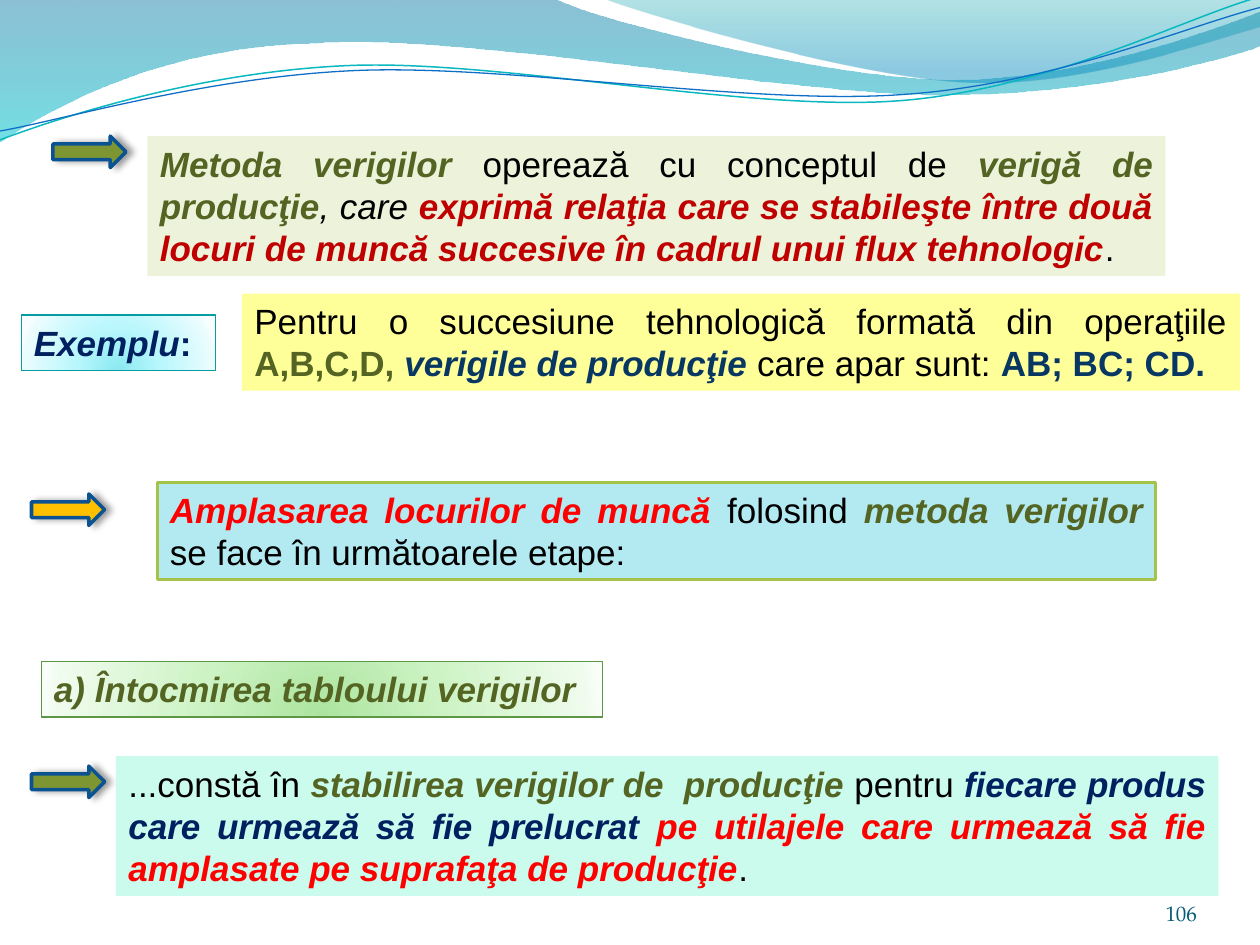
from dataclasses import dataclass
from math import cos, radians, sin
from typing import NamedTuple, Optional

from lxml.etree import SubElement
from pptx import Presentation
from pptx.dml.color import RGBColor
from pptx.enum.shapes import MSO_SHAPE as Preset
from pptx.enum.text import MSO_ANCHOR as Anchor, PP_ALIGN as Align
from pptx.oxml.ns import qn
from pptx.util import Inches, Pt

BLACK = RGBColor(0x00, 0x00, 0x00)
OLIVE = RGBColor(0x54, 0x64, 0x22)
DARK_RED = RGBColor(0xC0, 0x00, 0x00)
RED = RGBColor(0xFF, 0x00, 0x00)
NAVY = RGBColor(0x00, 0x20, 0x60)
BLUE = RGBColor(0x08, 0x37, 0x63)
PAGE_BLUE = RGBColor(0x04, 0x5D, 0x75)
ARROW_GREEN = RGBColor(0x7E, 0x96, 0x32)
ARROW_GOLD = RGBColor(0xFF, 0xC0, 0x00)
ARROW_EDGE = RGBColor(0x0B, 0x52, 0x92)
PALE_GREEN = RGBColor(0xED, 0xF3, 0xDB)
PALE_YELLOW = RGBColor(0xFF, 0xFF, 0x99)
PALE_BLUE = RGBColor(0xB3, 0xEA, 0xF2)
PALE_MINT = RGBColor(0xCA, 0xFB, 0xED)
LIME = RGBColor(0xA5, 0xC2, 0x49)
TEAL = RGBColor(0x06, 0x9C, 0xA3)
LEAF = RGBColor(0x5B, 0x97, 0x47)
WAVE_TEAL = RGBColor(0x0A, 0xB8, 0xBF)
WAVE_BLUE = RGBColor(0x0F, 0x6F, 0xC6)
WAVE_TILT = -2.7


class Stop(NamedTuple):
    position: int
    color: str
    alpha: int = 100


class Line(NamedTuple):
    color: RGBColor
    width: float


class Run(NamedTuple):
    text: str
    color: RGBColor = BLACK
    bold: bool = False
    italic: bool = False


@dataclass
class Wave:
    """Points of an outline: 2 values make a line, 6 a Bezier curve."""
    start: tuple
    segments: list
    stops: Optional[list] = None
    line: Optional[Line] = None
    center: Optional[tuple] = None  # tilted about this point


@dataclass
class Box:
    area: tuple
    runs: list
    fill: Optional[RGBColor] = None
    stops: Optional[list] = None
    line: Optional[Line] = None
    align: Align = Align.JUSTIFY


WAVES = [
    Wave((0, 0), [(4.4, -0.01), (4.76, 0.17, 6.64, 0.63, 7.58, 0.63),
                  (8.53, 0.63, 9.58, 0.26, 10, 0.09), (10.01, 0.36),
                  (9.83, 0.44, 8.7, 0.76, 7.46, 0.75),
                  (6.22, 0.75, 3.82, 0.28, 2.57, 0.34),
                  (1.29, 0.36, 0.46, 0.83, -0.01, 1.13)],
         stops=[Stop(0, "0074A1", 45), Stop(100, "00C6CF", 55)]),
    Wave((4.79, -0.01), [(5.09, 0.11, 6.82, 0.62, 7.69, 0.65),
                         (8.56, 0.69, 9.61, 0.32, 10, 0.21), (10, 0)],
         stops=[Stop(0, "00A1A9", 30), Stop(80, "008BBF", 45)]),
    Wave((0, 1.11), [(0.48, 0.93, 1.58, 0.57, 2.77, 0.52),
                     (3.95, 0.47, 5.93, 0.89, 7.13, 0.8),
                     (8.33, 0.71, 9.38, 0.15, 9.98, -0.02)],
         line=Line(WAVE_TEAL, 0.85), center=(4.99, 0.57)),
    Wave((0, 1.04), [(0.47, 0.96, 1.64, 0.61, 2.83, 0.56),
                     (4.03, 0.51, 5.97, 0.84, 7.17, 0.75),
                     (8.36, 0.67, 9.41, 0.21, 10, 0.06)],
         line=Line(WAVE_BLUE, 0.75), center=(5, 0.59)),
]

BOXES = [
    Box((1.17, 1.08, 8.08, 1.11), [
        Run("Metoda verigilor ", OLIVE, True, True),
        Run("operează cu conceptul de "),
        Run("verigă de producţie", OLIVE, True, True),
        Run(", care ", italic=True),
        Run("exprimă relaţia care se stabileşte între două locuri de muncă "
            "succesive în cadrul unui flux tehnologic", DARK_RED, True, True),
        Run(".")], fill=PALE_GREEN),
    Box((0.17, 2.5, 1.54, 0.44),
        [Run("Exemplu", NAVY, True, True), Run(":", NAVY, True)],
        stops=[Stop(0, "8BE9F1"), Stop(43, "B9F7FD"),
               Stop(93, "EAFCFE"), Stop(100, "F8FEFF")],
        line=Line(TEAL, 0.75), align=Align.LEFT),
    Box((1.92, 2.33, 7.92, 0.77), [
        Run("Pentru o succesiune tehnologică formată din operaţiile "),
        Run("A,B,C,D, ", OLIVE, True),
        Run("verigile de producţie ", BLUE, True, True),
        Run("care apar sunt: "),
        Run("AB; BC; CD.", BLUE, True)], fill=PALE_YELLOW),
    Box((1.25, 3.83, 7.92, 0.77), [
        Run("Amplasarea locurilor de muncă ", RED, True, True),
        Run("folosind "),
        Run("metoda verigilor ", OLIVE, True, True),
        Run("se face în următoarele etape:")],
        fill=PALE_BLUE, line=Line(LIME, 2)),
    Box((0.92, 6, 8.75, 1.11), [
        Run("...constă în "),
        Run("stabilirea verigilor de  producţie ", OLIVE, True, True),
        Run("pentru "),
        Run("fiecare produs care urmează să fie prelucrat ", NAVY, True, True),
        Run("pe utilajele care urmează să fie amplasate pe suprafaţa de producţie",
            RED, True, True),
        Run(".")], fill=PALE_MINT),
    Box((0.33, 5.25, 4.45, 0.44),
        [Run("a) Întocmirea tabloului verigilor", OLIVE, True, True)],
        stops=[Stop(0, "ACE49F"), Stop(43, "CDF3C4"),
               Stop(93, "EFFBED"), Stop(100, "F9FFF8")],
        line=Line(LEAF, 0.75), align=Align.LEFT),
]

ARROWS = [(0.42, 1.08, ARROW_GREEN), (0.25, 6.08, ARROW_GREEN),
          (0.25, 3.92, ARROW_GOLD)]


def add_color(parent, color: str, alpha: int) -> None:
    element = SubElement(parent, qn("a:srgbClr"), val=color)
    if alpha < 100:
        SubElement(element, qn("a:alpha"), val=str(alpha * 1000))


def set_gradient(shape, stops: list, radial: bool) -> None:
    shape.fill.gradient()
    gradient = shape._element.spPr.find(qn("a:gradFill"))
    gradient.clear()
    stop_list = SubElement(gradient, qn("a:gsLst"))
    for stop in stops:
        element = SubElement(stop_list, qn("a:gs"), pos=str(stop.position * 1000))
        add_color(element, stop.color, stop.alpha)
    if radial:
        center = SubElement(gradient, qn("a:path"), path="circle")
        SubElement(center, qn("a:fillToRect"), l="50000", t="130000", r="50000", b="-30000")
    else:
        SubElement(gradient, qn("a:lin"), ang="5400000", scaled="1")


def style(shape, fill: Optional[RGBColor] = None, stops: Optional[list] = None,
          line: Optional[Line] = None, radial: bool = True) -> None:
    if stops:
        set_gradient(shape, stops, radial)
    elif fill is not None:
        shape.fill.solid()
        shape.fill.fore_color.rgb = fill
    else:
        shape.fill.background()
    if line:
        shape.line.color.rgb = line.color
        shape.line.width = Pt(line.width)
    else:
        shape.line.fill.background()
    shape.shadow.inherit = False


def add_run(paragraph, item: Run, font_name: str = "Arial", size: int = 20) -> None:
    run = paragraph.add_run()
    run.text = item.text
    run.font.name, run.font.size = font_name, Pt(size)
    run.font.bold, run.font.italic = item.bold, item.italic
    run.font.color.rgb = item.color


def untilt(point: tuple, center: tuple) -> tuple:
    angle = radians(-WAVE_TILT)
    x, y = point[0] - center[0], point[1] - center[1]
    return (center[0] + x * cos(angle) - y * sin(angle),
            center[1] + x * sin(angle) + y * cos(angle))


def draw_wave(slide, wave: Wave) -> None:
    points = [wave.start]
    for segment in wave.segments:
        points += zip(segment[::2], segment[1::2])
    if wave.center:
        points = [untilt(point, wave.center) for point in points]
    corners = [(Inches(x), Inches(y)) for x, y in points]
    builder = slide.shapes.build_freeform(*corners[0])
    builder.add_line_segments(corners[1:], close=wave.stops is not None)
    shape = builder.convert_to_shape()
    # Merge each three control points into one curve
    steps = iter(list(shape._element.iter(qn("a:lnTo"))))
    for segment in wave.segments:
        first = next(steps)
        if len(segment) == 6:
            curve = first.getparent().makeelement(qn("a:cubicBezTo"))
            first.addprevious(curve)
            for step in (first, next(steps), next(steps)):
                curve.append(step[0])
                step.getparent().remove(step)
    style(shape, stops=wave.stops, line=wave.line, radial=False)
    if wave.center:
        shape.rotation = WAVE_TILT


def draw_box(slide, box: Box) -> None:
    shape = slide.shapes.add_shape(Preset.RECTANGLE, *map(Inches, box.area))
    style(shape, box.fill, box.stops, box.line)
    frame = shape.text_frame
    frame.word_wrap, frame.vertical_anchor = True, Anchor.TOP
    paragraph = frame.paragraphs[0]
    paragraph.alignment = box.align
    for item in box.runs:
        add_run(paragraph, item)


def draw_arrow(slide, left: float, top: float, color: RGBColor) -> None:
    shape = slide.shapes.add_shape(Preset.RIGHT_ARROW, Inches(left), Inches(top),
                                   Inches(0.58), Inches(0.25))
    style(shape, color, line=Line(ARROW_EDGE, 2))
    effects = shape._element.spPr.find(qn("a:effectLst"))
    shadow = SubElement(effects, qn("a:outerShdw"), blurRad=str(Pt(4)), dist=str(Pt(3)), dir="0")
    add_color(shadow, "000000", 40)


def draw_page_number(slide) -> None:
    frame = slide.shapes.add_textbox(*map(Inches, (8.67, 6.95, 0.83, 0.4))).text_frame
    frame.margin_left = frame.margin_right = frame.margin_top = frame.margin_bottom = 0
    frame.word_wrap, frame.vertical_anchor = True, Anchor.BOTTOM
    frame.paragraphs[0].alignment = Align.RIGHT
    add_run(frame.paragraphs[0], Run("106", PAGE_BLUE), "TeX Gyre Pagella", 12)


def main() -> None:
    presentation = Presentation()
    presentation.slide_width, presentation.slide_height = Inches(10), Inches(7.5)
    slide = presentation.slides.add_slide(presentation.slide_layouts[6])
    for wave in WAVES:
        draw_wave(slide, wave)
    draw_page_number(slide)
    for box in BOXES:
        draw_box(slide, box)
    for arrow in ARROWS:
        draw_arrow(slide, *arrow)
    presentation.save("out.pptx")


if __name__ == "__main__":
    main()
